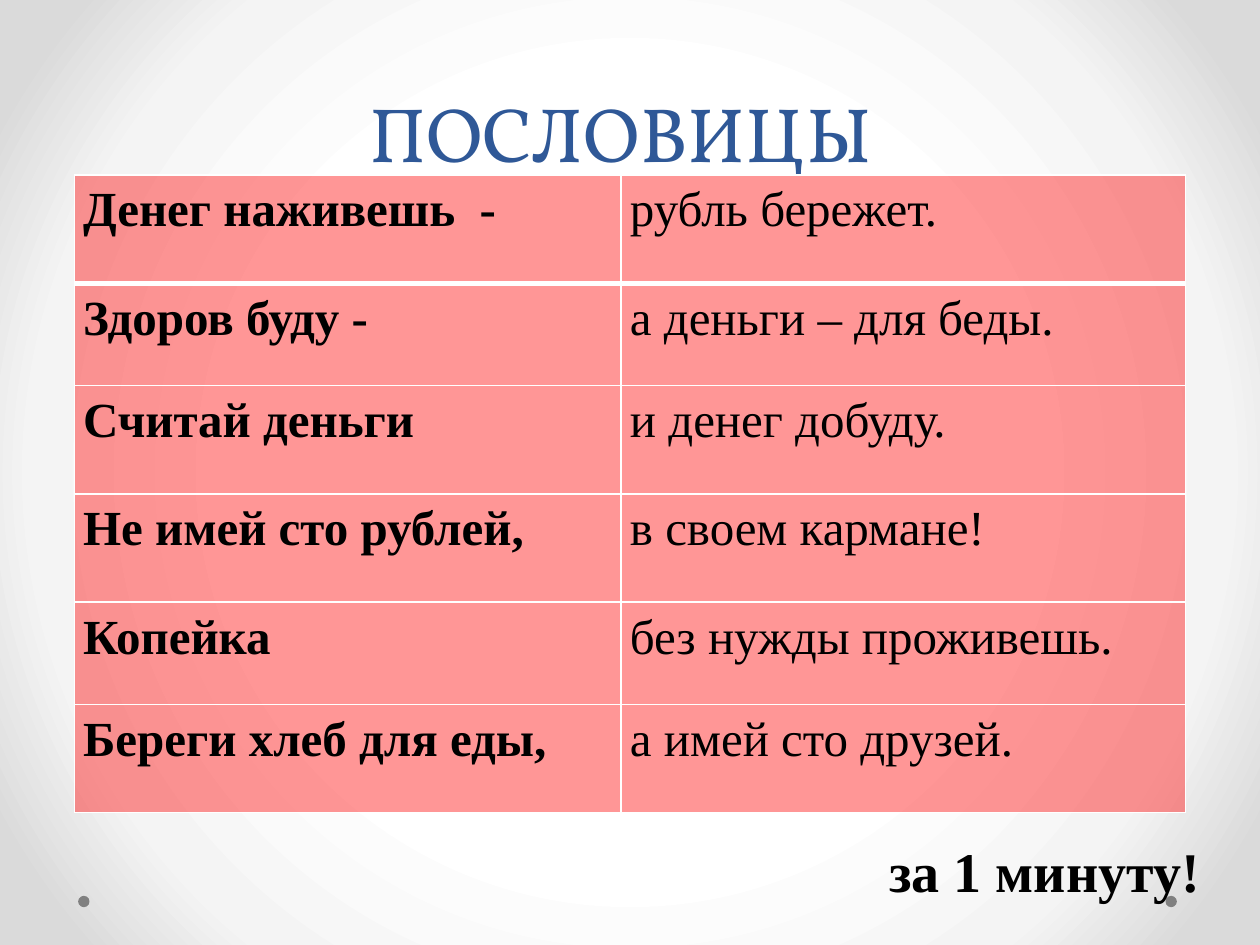
from pptx import Presentation
from pptx.dml.color import RGBColor
from pptx.enum.shapes import MSO_SHAPE
from pptx.enum.text import MSO_ANCHOR, MSO_AUTO_SIZE, PP_ALIGN
from pptx.oxml import parse_xml
from pptx.oxml.ns import nsdecls
from pptx.util import Inches, Pt

OVAL = MSO_SHAPE.OVAL
BOTTOM = MSO_ANCHOR.BOTTOM
CENTER = PP_ALIGN.CENTER
NO_FIT = MSO_AUTO_SIZE.NONE
GROW = MSO_AUTO_SIZE.SHAPE_TO_FIT_TEXT

BODY_FONT = "Times New Roman"
TITLE_FONT = "Vollkorn"
BLACK = "000000"
WHITE = "FFFFFF"
GRAY = "808080"
BLUE = "2F5897"
RED = "FF0000"
CELL_OPACITY = 41
BACKGROUND_STOPS = [(50, WHITE), (76, "F4F4F4"), (92, "DADADA")]
COLUMN_WIDTHS = [4.34, 4.48]
ROW_HEIGHTS = [0.86, 0.81, 0.86, 0.86, 0.81, 0.86]
PROVERBS = [
    ("Денег наживешь  -", "рубль бережет."),
    ("Здоров буду -", "а деньги – для беды."),
    ("Считай деньги", "и денег добуду."),
    ("Не имей сто рублей,", "в своем кармане!"),
    ("Копейка", "без нужды проживешь."),
    ("Береги хлеб для еды,", "а имей сто друзей."),
]


def color(value):
    """Turn a hex string into a color."""
    return RGBColor.from_string(value)


def write_text(text_frame, text, font_name, size, text_color, bold=False):
    """Fill a text frame with one formatted paragraph and return it."""
    text_frame.text = text
    paragraph = text_frame.paragraphs[0]
    font = paragraph.runs[0].font
    font.name = font_name
    font.size = Pt(size)
    font.bold = bold
    font.color.rgb = color(text_color)
    return paragraph


def set_background(slide):
    """Give the slide a circular gradient background."""
    stops = "".join(
        f'<a:gs pos="{position * 1000}"><a:srgbClr val="{value}"/></a:gs>'
        for position, value in BACKGROUND_STOPS
    )
    background = parse_xml(
        f'<p:bg {nsdecls("p", "a")}><p:bgPr><a:gradFill rotWithShape="1">'
        f'<a:gsLst>{stops}</a:gsLst><a:path path="circle">'
        '<a:fillToRect l="50000" t="50000" r="50000" b="50000"/></a:path>'
        "</a:gradFill><a:effectLst/></p:bgPr></p:bg>"
    )
    slide.element.cSld.insert(0, background)


def add_dot(slide, left):
    """Add a small gray dot near the bottom edge."""
    dot = slide.shapes.add_shape(
        OVAL, Inches(left), Inches(7.11), Inches(0.09), Inches(0.09)
    )
    dot.shadow.inherit = False
    dot.fill.solid()
    dot.fill.fore_color.rgb = color(GRAY)
    dot.line.fill.background()


def set_title(slide, text):
    """Place and format the title."""
    title = slide.shapes.title
    title.left, title.top = Inches(0.43), Inches(0.44)
    title.width, title.height = Inches(9), Inches(1.02)
    paragraph = write_text(title.text_frame, text, TITLE_FONT, 44, BLUE)
    title.text_frame.auto_size = NO_FIT
    title.text_frame.vertical_anchor = BOTTOM
    paragraph.alignment = CENTER
    paragraph.line_spacing = Pt(58)


def set_borders(cell, top_width, bottom_width):
    """Draw white lines around a cell."""
    widths = {"lnL": 1, "lnR": 1, "lnT": top_width, "lnB": bottom_width}
    properties = cell._tc.get_or_add_tcPr()
    for index, (side, width) in enumerate(widths.items()):
        border = parse_xml(
            f'<a:{side} {nsdecls("a")} w="{Pt(width)}"><a:solidFill>'
            f'<a:srgbClr val="{WHITE}"/></a:solidFill></a:{side}>'
        )
        properties.insert(index, border)


def format_cell(cell, text, bold):
    """Write a cell and give it a translucent fill."""
    cell.margin_left = cell.margin_right = Inches(0.07)
    cell.margin_top = cell.margin_bottom = 0
    paragraph = write_text(cell.text_frame, text, BODY_FONT, 28, BLACK, bold)
    paragraph.line_spacing = 1.15
    cell.fill.solid()
    cell.fill.fore_color.rgb = color(RED)
    fill_color = cell._tc.tcPr.find(".//{*}srgbClr")
    fill_color.append(
        parse_xml(f'<a:alpha {nsdecls("a")} val="{CELL_OPACITY * 1000}"/>')
    )


def add_proverb_table(slide):
    """Add the table with the halves of the proverbs."""
    table = slide.shapes.add_table(
        len(PROVERBS), len(COLUMN_WIDTHS), Inches(0.59), Inches(1.39),
        Inches(sum(COLUMN_WIDTHS)), Inches(sum(ROW_HEIGHTS)),
    ).table
    for column, width in zip(table.columns, COLUMN_WIDTHS):
        column.width = Inches(width)
    for row_index, (height, proverb) in enumerate(zip(ROW_HEIGHTS, PROVERBS)):
        table.rows[row_index].height = Inches(height)
        for column_index, text in enumerate(proverb):
            cell = table.cell(row_index, column_index)
            format_cell(cell, text, bold=column_index == 0)
            set_borders(
                cell,
                top_width=3 if row_index == 1 else 1,
                bottom_width=3 if row_index == 0 else 1,
            )


def add_time_limit(slide, text):
    """Add the time limit under the table."""
    text_box = slide.shapes.add_textbox(
        Inches(6.96), Inches(6.59), Inches(2.69), Inches(0.64)
    )
    write_text(text_box.text_frame, text, BODY_FONT, 32, BLACK, bold=True)
    text_box.text_frame.word_wrap = False
    text_box.text_frame.auto_size = GROW


def main():
    """Build the slide and save it."""
    presentation = Presentation()
    presentation.slide_width = Inches(10)
    presentation.slide_height = Inches(7.5)
    slide = presentation.slides.add_slide(presentation.slide_layouts[5])
    set_background(slide)
    for left in (9.25, 0.62):
        add_dot(slide, left)
    set_title(slide, "ПОСЛОВИЦЫ")
    add_proverb_table(slide)
    add_time_limit(slide, "за 1 минуту!")
    presentation.save("out.pptx")


if __name__ == "__main__":
    main()
